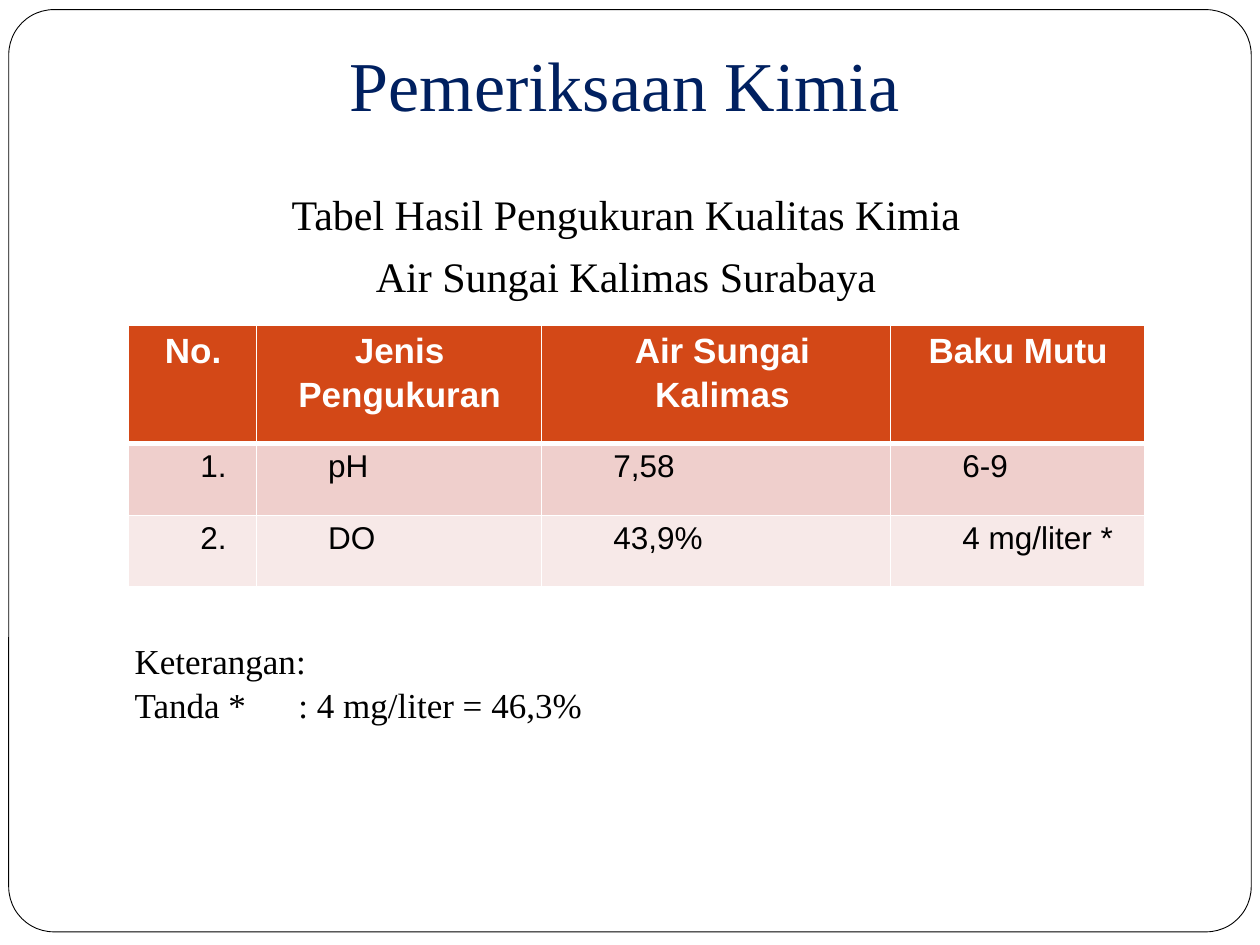
import pptx
import pptx.util
import pptx.dml.color
import pptx.enum.shapes
import pptx.enum.text
import pptx.oxml.ns
from lxml import etree

Pt = pptx.util.Pt
ALIGN = pptx.enum.text.PP_ALIGN
ANCHOR = pptx.enum.text.MSO_ANCHOR
COLORS = {"white": "FFFFFF", "black": "000000", "navy": "002060",
          "header": "D34817", "row_odd": "EFCFCC", "row_even": "F7E9E8"}


def rgb(name):
    return pptx.dml.color.RGBColor.from_string(COLORS[name])


def style(para, font, size, color, align, margin=0, indent=0, bold=False):
    """Format a paragraph and its runs, without a bullet."""
    props = para._p.get_or_add_pPr()
    props.set("marL", str(Pt(margin)))
    props.set("indent", str(Pt(indent)))
    etree.SubElement(props, pptx.oxml.ns.qn("a:buNone"))
    para.alignment = align
    for span in para.runs:
        span.font.name = font
        span.font.size = Pt(size)
        span.font.bold = bold
        span.font.color.rgb = rgb(color)


deck = pptx.Presentation()
deck.slide_width, deck.slide_height = Pt(720), Pt(540)
page = deck.slides.add_slide(deck.slide_layouts[1])

# Rounded frame, behind everything else
frame = page.shapes.add_shape(pptx.enum.shapes.MSO_SHAPE.ROUNDED_RECTANGLE,
                              Pt(5), Pt(5.5), Pt(710), Pt(527))
frame.adjustments[0] = 0.049
frame.shadow.inherit = False
frame.fill.solid()
frame.fill.fore_color.rgb = rgb("white")
frame.line.color.rgb = rgb("black")
frame.line.width = Pt(0.5)
page.shapes._spTree.insert(2, frame._element)

# Title
title = page.shapes.title
title.left, title.top, title.width, title.height = Pt(38), Pt(12), Pt(648), Pt(67)
title.text_frame.text = "Pemeriksaan Kimia "
title.text_frame.vertical_anchor = ANCHOR.BOTTOM
title.text_frame.margin_bottom = Pt(7.2)
title.text_frame.auto_size = pptx.enum.text.MSO_AUTO_SIZE.NONE
style(title.text_frame.paragraphs[0], "Times New Roman", 40, "navy", ALIGN.CENTER)

# Table caption above the table and note below it
body = page.placeholders[1]
body.left, body.top, body.width, body.height = Pt(56), Pt(104), Pt(603.5), Pt(330)
body.text_frame.auto_size = pptx.enum.text.MSO_AUTO_SIZE.NONE
body.text_frame.vertical_anchor = ANCHOR.TOP
lines = [  # text, size, alignment, left margin, first indent, space before
    ("Tabel Hasil Pengukuran Kualitas Kimia", 24, ALIGN.CENTER, 0, 0, 0),
    ("Air Sungai Kalimas Surabaya", 24, ALIGN.CENTER, 0, 0, 6.5),
    ("Keterangan:", 20, ALIGN.LEFT, 35.3, -21.6, 194),
    ("Tanda *\t: 4 mg/liter = 46,3%", 20, ALIGN.LEFT, 35.3, -21.6, 1),
]
body.text_frame.text = "\n".join(line[0] for line in lines)
for para, (text, size, align, margin, indent, gap) in zip(body.text_frame.paragraphs, lines):
    style(para, "Times New Roman", size, "black", align, margin, indent)
    para.space_before = Pt(gap)

# Measurement table
rows = [["No.", "Jenis Pengukuran", "Air Sungai Kalimas", "Baku Mutu"],
        ["1.", "pH", "7,58", "6-9"],
        ["2.", "DO", "43,9%", "4 mg/liter *"]]
widths = [73, 163, 199.5, 145]
heights = [67.5, 41, 41]
fills = ["header", "row_odd", "row_even"]
table = page.shapes.add_table(3, 4, Pt(73.5), Pt(186), Pt(sum(widths)), Pt(sum(heights))).table
for column, width in zip(table.columns, widths):
    column.width = Pt(width)
for r, texts in enumerate(rows):
    table.rows[r].height = Pt(heights[r])
    for c, text in enumerate(texts):
        cell = table.cell(r, c)
        cell.text = text
        cell.margin_left = cell.margin_right = Pt(5)
        cell.margin_top = cell.margin_bottom = 0
        para = cell.text_frame.paragraphs[0]
        if r == 0:
            style(para, "Arial", 20, "white", ALIGN.CENTER, 7.2 if c == 2 else 0.7, bold=True)
        else:
            style(para, "Arial", 18, "black", ALIGN.JUSTIFY, 36)
        para.line_spacing = 1.15

        # White borders, thicker under the header; borders precede the fill
        props = cell._tc.get_or_add_tcPr()
        for side in ("L", "R", "T", "B"):
            thick = (r, side) in ((0, "B"), (1, "T"))
            edge = etree.SubElement(props, pptx.oxml.ns.qn("a:ln" + side),
                                    w=str(Pt(3 if thick else 1)))
            solid = etree.SubElement(edge, pptx.oxml.ns.qn("a:solidFill"))
            etree.SubElement(solid, pptx.oxml.ns.qn("a:srgbClr"), val=COLORS["white"])
        cell.fill.solid()
        cell.fill.fore_color.rgb = rgb(fills[r])

deck.save("out.pptx")
